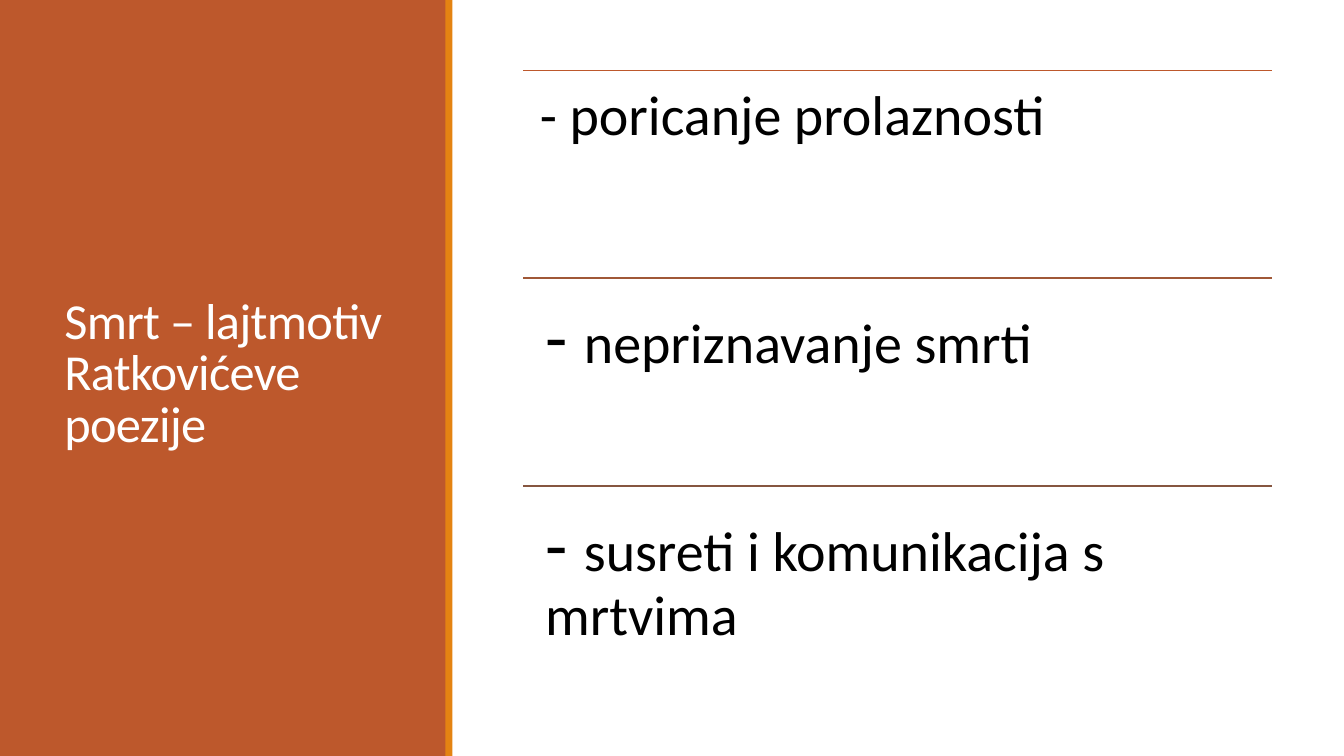
"""Build a slide with a title panel and three ruled motifs."""
from dataclasses import dataclass

from lxml import etree
from pptx import Presentation
from pptx.dml.color import RGBColor
from pptx.enum.shapes import MSO_CONNECTOR, MSO_SHAPE
from pptx.enum.text import MSO_ANCHOR
from pptx.oxml.ns import qn
from pptx.slide import Slide
from pptx.text.text import TextFrame, _Run
from pptx.util import Pt

STRAIGHT = MSO_CONNECTOR.STRAIGHT
RECTANGLE = MSO_SHAPE.RECTANGLE
MIDDLE = MSO_ANCHOR.MIDDLE
TOP = MSO_ANCHOR.TOP

RUST = RGBColor(0xBD, 0x58, 0x2C)
ORANGE = RGBColor(0xE4, 0x83, 0x12)
BROWN = RGBColor(0xA0, 0x58, 0x37)
DARK_BROWN = RGBColor(0x86, 0x56, 0x40)
WHITE = RGBColor(0xFF, 0xFF, 0xFF)
BLACK = RGBColor(0x00, 0x00, 0x00)

FONT_NAME = "Calibri"
SLIDE_WIDTH, SLIDE_HEIGHT = 960, 540
MOTIF_LEFT, MOTIF_TOP = 373.7, 50.4
MOTIF_WIDTH, MOTIF_HEIGHT = 535, 148.4


@dataclass(frozen=True)
class Panel:
    left: float
    width: float
    color: RGBColor


@dataclass(frozen=True)
class Motif:
    text: str
    dash_size: float
    inset: float
    rule_color: RGBColor


PANELS = [Panel(0, 319, RUST), Panel(318.2, 5, ORANGE)]
MOTIFS = [
    Motif("poricanje prolaznosti", 40, 12, RUST),
    Motif("nepriznavanje smrti", 52, 15.75, BROWN),
    Motif("susreti i komunikacija s mrtvima", 52, 15.75, DARK_BROWN),
]


def add_panel(slide: Slide, panel: Panel) -> None:
    shape = slide.shapes.add_shape(
        RECTANGLE, Pt(panel.left), Pt(0), Pt(panel.width), Pt(SLIDE_HEIGHT)
    )
    shape.shadow.inherit = False
    shape.fill.solid()
    shape.fill.fore_color.rgb = panel.color
    shape.line.fill.background()


def add_text_frame(
    slide: Slide, left: float, top: float, width: float, height: float, inset: float
) -> TextFrame:
    text_box = slide.shapes.add_textbox(Pt(left), Pt(top), Pt(width), Pt(height))
    text_frame = text_box.text_frame
    text_frame.word_wrap = True
    text_frame.margin_left = text_frame.margin_right = Pt(inset)
    text_frame.margin_top = text_frame.margin_bottom = Pt(inset)
    return text_frame


def format_run(run: _Run, size: float, color: RGBColor) -> None:
    run.font.name = FONT_NAME
    run.font.size = Pt(size)
    run.font.color.rgb = color


def add_title(slide: Slide) -> None:
    text_frame = add_text_frame(slide, 38.9, 41, 242.6, 454.3, 7.2)
    text_frame.vertical_anchor = MIDDLE
    text_frame.text = "Smrt – lajtmotiv Ratkovićeve poezije"
    paragraph = text_frame.paragraphs[0]
    paragraph.line_spacing = 0.85
    run = paragraph.runs[0]
    format_run(run, 36, WHITE)
    run._r.get_or_add_rPr().set("spc", "-50")


def add_rule(slide: Slide, top: float, color: RGBColor) -> None:
    rule = slide.shapes.add_connector(
        STRAIGHT, Pt(MOTIF_LEFT), Pt(top), Pt(MOTIF_LEFT + MOTIF_WIDTH), Pt(top)
    )
    rule.line.color.rgb = color
    rule.line.width = Pt(1.25)
    etree.SubElement(rule._element.spPr, qn("a:effectLst"))


def add_motif(slide: Slide, motif: Motif, top: float) -> None:
    add_rule(slide, top, motif.rule_color)
    text_frame = add_text_frame(
        slide, MOTIF_LEFT, top, MOTIF_WIDTH, MOTIF_HEIGHT, motif.inset
    )
    text_frame.vertical_anchor = TOP
    paragraph = text_frame.paragraphs[0]
    paragraph.line_spacing = 0.9
    for text, size in (("- ", motif.dash_size), (motif.text, 40)):
        run = paragraph.add_run()
        run.text = text
        format_run(run, size, BLACK)


def main() -> None:
    presentation = Presentation()
    presentation.slide_width = Pt(SLIDE_WIDTH)
    presentation.slide_height = Pt(SLIDE_HEIGHT)
    slide = presentation.slides.add_slide(presentation.slide_layouts[6])
    for panel in PANELS:
        add_panel(slide, panel)
    add_title(slide)
    for index, motif in enumerate(MOTIFS):
        add_motif(slide, motif, MOTIF_TOP + index * MOTIF_HEIGHT)
    presentation.save("out.pptx")


if __name__ == "__main__":
    main()
